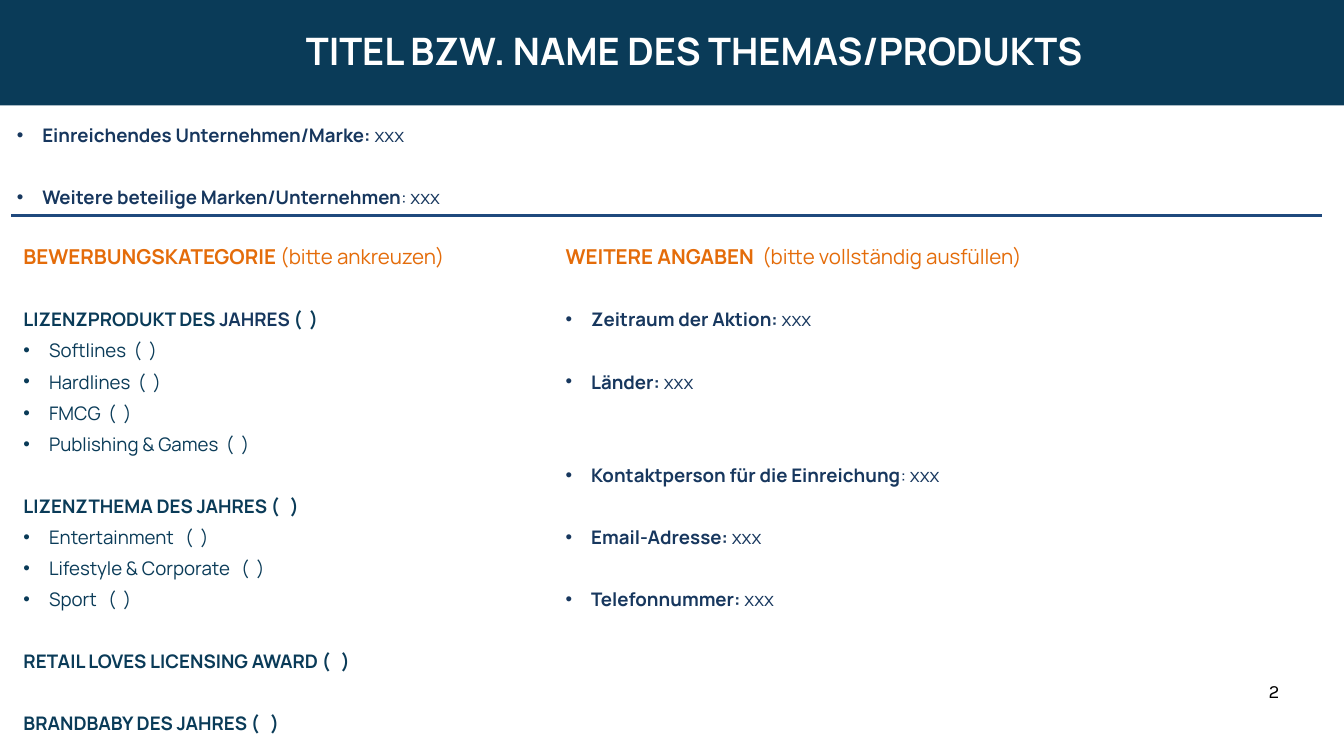
from dataclasses import dataclass

from lxml.etree import SubElement
from pptx import Presentation
from pptx.dml.color import RGBColor
from pptx.enum.shapes import MSO_CONNECTOR as Connector, MSO_SHAPE as Preset
from pptx.enum.text import MSO_AUTO_SIZE as AutoSize, PP_ALIGN as Align
from pptx.oxml.ns import qn
from pptx.util import Inches, Pt

CELL = Inches(1 / 12)
COLUMNS, ROWS = 240, 135
PETROL, NAVY, ORANGE, RULE_BLUE = "0A3B58", "17375E", "E46C0A", "1F497D"
WHITE, BLACK = "FFFFFF", "000000"
LINE_PITCH = 33.3
INDENT = Inches(0.38)


@dataclass(frozen=True)
class Area:
    """A place on the slide grid, in columns and rows."""
    column: float
    row: float
    width: float
    height: float


@dataclass(frozen=True)
class Span:
    """A stretch of text in one style."""
    text: str
    color: str
    bold: bool = True
    size: float = 20
    font: str = "Manrope"


@dataclass(frozen=True)
class Entry:
    """A paragraph with the number of line heights left free above it."""
    spans: tuple[Span, ...]
    gap: int = 0
    bullet: bool = False
    pitch: float = LINE_PITCH
    align: Align = Align.LEFT


def grid(cells: float) -> int:
    """Convert grid cells to a length."""
    return round(cells * CELL)


def rgb(color: str) -> RGBColor:
    """Convert a hex string to a colour."""
    return RGBColor.from_string(color)


def heading(text: str, hint: str) -> Entry:
    """Describe an orange column heading with its hint."""
    return Entry((Span(text, ORANGE, size=22), Span(hint, ORANGE, False, 22)))


def field(label: str, value: str = "xxx", gap: int = 1) -> Entry:
    """Describe a bulleted form field."""
    return Entry((Span(label, NAVY), Span(value, NAVY, False)), gap, True)


def category(text: str) -> Entry:
    """Describe an award category to tick."""
    return Entry((Span(text, PETROL),), 1)


def option(text: str) -> Entry:
    """Describe a bulleted option within a category."""
    return Entry((Span(text, PETROL, False),), bullet=True)


def add_entry(paragraph, entry: Entry) -> None:
    """Fill and format one paragraph."""
    paragraph.alignment = entry.align
    paragraph.line_spacing = Pt(entry.pitch)
    paragraph.space_before = Pt(entry.gap * entry.pitch)
    if entry.bullet:
        properties = paragraph._p.get_or_add_pPr()
        properties.set("marL", str(INDENT))
        properties.set("indent", str(-INDENT))
        SubElement(properties, qn("a:buFont")).set("typeface", "Arial")
        SubElement(properties, qn("a:buChar")).set("char", "•")
    for span in entry.spans:
        run = paragraph.add_run()
        run.text = span.text
        run.font.name = span.font
        run.font.size = Pt(span.size)
        run.font.bold = span.bold
        run.font.color.rgb = rgb(span.color)


def add_entries(slide, area: Area, entries: list[Entry], wrap: bool = True) -> None:
    """Draw a text box without margins."""
    box = slide.shapes.add_textbox(
        grid(area.column), grid(area.row), grid(area.width), grid(area.height))
    frame = box.text_frame
    frame.word_wrap = wrap
    frame.auto_size = AutoSize.SHAPE_TO_FIT_TEXT
    frame.margin_left = frame.margin_right = frame.margin_top = frame.margin_bottom = 0
    for index, entry in enumerate(entries):
        add_entry(frame.add_paragraph() if index else frame.paragraphs[0], entry)


def add_band(slide, area: Area, color: str) -> None:
    """Draw a plain filled band."""
    band = slide.shapes.add_shape(
        Preset.RECTANGLE, grid(area.column), grid(area.row), grid(area.width), grid(area.height))
    band.shadow.inherit = False
    band.fill.solid()
    band.fill.fore_color.rgb = rgb(color)
    band.line.fill.background()


def add_rule(slide, start: float, end: float, row: float) -> None:
    """Draw a horizontal dividing line."""
    rule = slide.shapes.add_connector(
        Connector.STRAIGHT, grid(start), grid(row), grid(end), grid(row))
    rule.line.color.rgb = rgb(RULE_BLUE)
    rule.line.width = Pt(3.25)
    SubElement(rule._element.spPr, qn("a:effectLst"))


COMPANIES = [
    field("Einreichendes Unternehmen/Marke: ", gap=0),
    field("Weitere beteilige Marken/Unternehmen", ": xxx"),
]
TITLE = [Entry((Span("TITEL BZW. NAME DES THEMAS/PRODUKTS", WHITE, size=40.5),),
               pitch=56.7, align=Align.CENTER)]
PAGE_NUMBER = [Entry((Span("2", BLACK, False, font="Karla"),), pitch=28, align=Align.CENTER)]
CATEGORIES = [
    heading("BEWERBUNGSKATEGORIE ", "(bitte ankreuzen)"),
    Entry((Span("LIZENZPRODUKT DES ", PETROL), Span("JAHRES", NAVY), Span(" (  )", PETROL)), 1),
    *map(option, ("Softlines  (  )", "Hardlines  (  )", "FMCG  (  )",
                  "Publishing & Games  (  )")),
    category("LIZENZTHEMA DES JAHRES (   )"),
    *map(option, ("Entertainment   (  )", "Lifestyle & Corporate   (  )", "Sport   (  )")),
    category("RETAIL LOVES LICENSING AWARD (   )"),
    category("BRANDBABY DES JAHRES (   )"),
]
DETAILS = [
    heading("WEITERE ANGABEN  ", "(bitte vollständig ausfüllen)"),
    field("Zeitraum der Aktion: "),
    field("Länder: "),
    field("Kontaktperson für die Einreichung", ": xxx", gap=2),
    field("Email-Adresse: "),
    field("Telefonnummer: "),
]


def main() -> None:
    """Build the application form slide."""
    deck = Presentation()
    deck.slide_width, deck.slide_height = grid(COLUMNS), grid(ROWS)
    slide = deck.slides.add_slide(deck.slide_layouts[6])
    add_band(slide, Area(0, 0, COLUMNS, 18.84), PETROL)
    add_entries(slide, Area(3, 20.5, 227, 21.8), COMPANIES)
    add_entries(slide, Area(27, 3.6, 194, 9.1), TITLE)
    add_entries(slide, Area(226.5, 120.8, 2, 2.6), PAGE_NUMBER, wrap=False)
    add_rule(slide, 2, 236, 38.5)
    add_entries(slide, Area(4.2, 42.4, 83, 94), CATEGORIES)
    add_entries(slide, Area(101, 42.4, 122, 94), DETAILS)
    deck.save("out.pptx")


if __name__ == "__main__":
    main()
